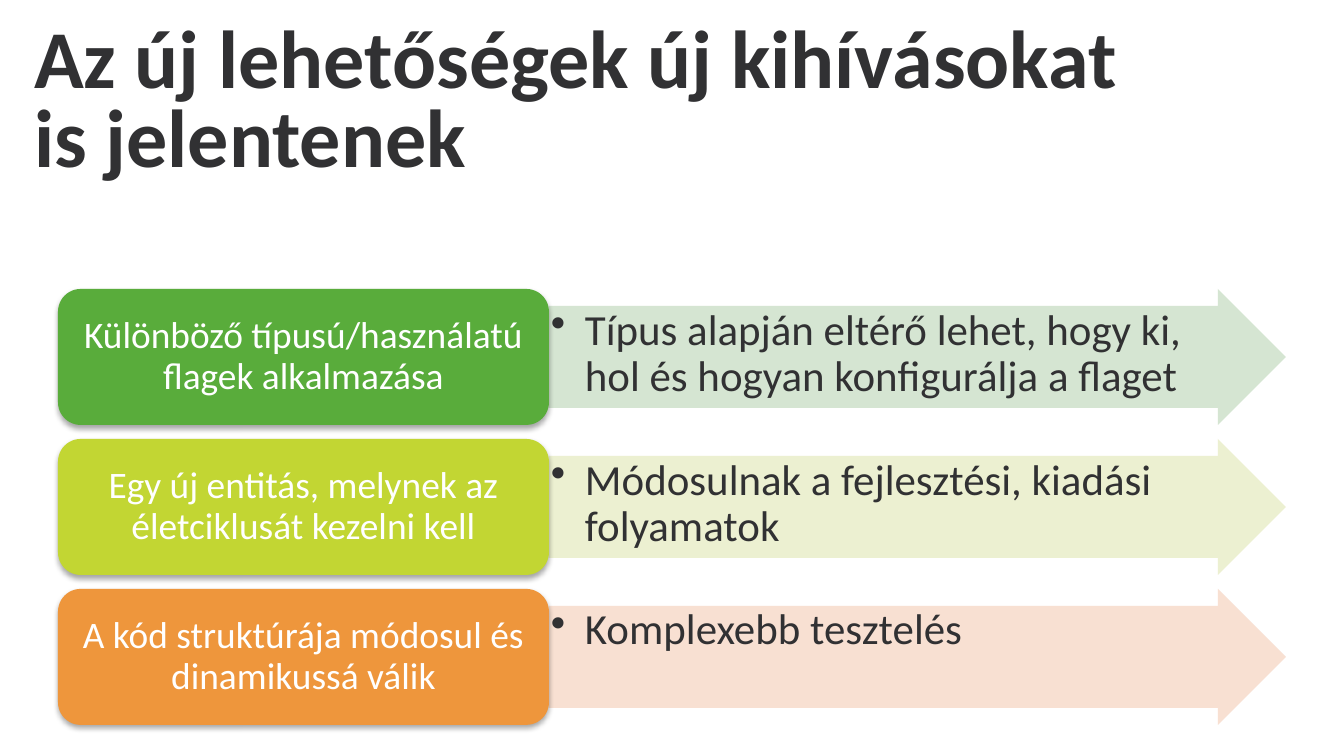
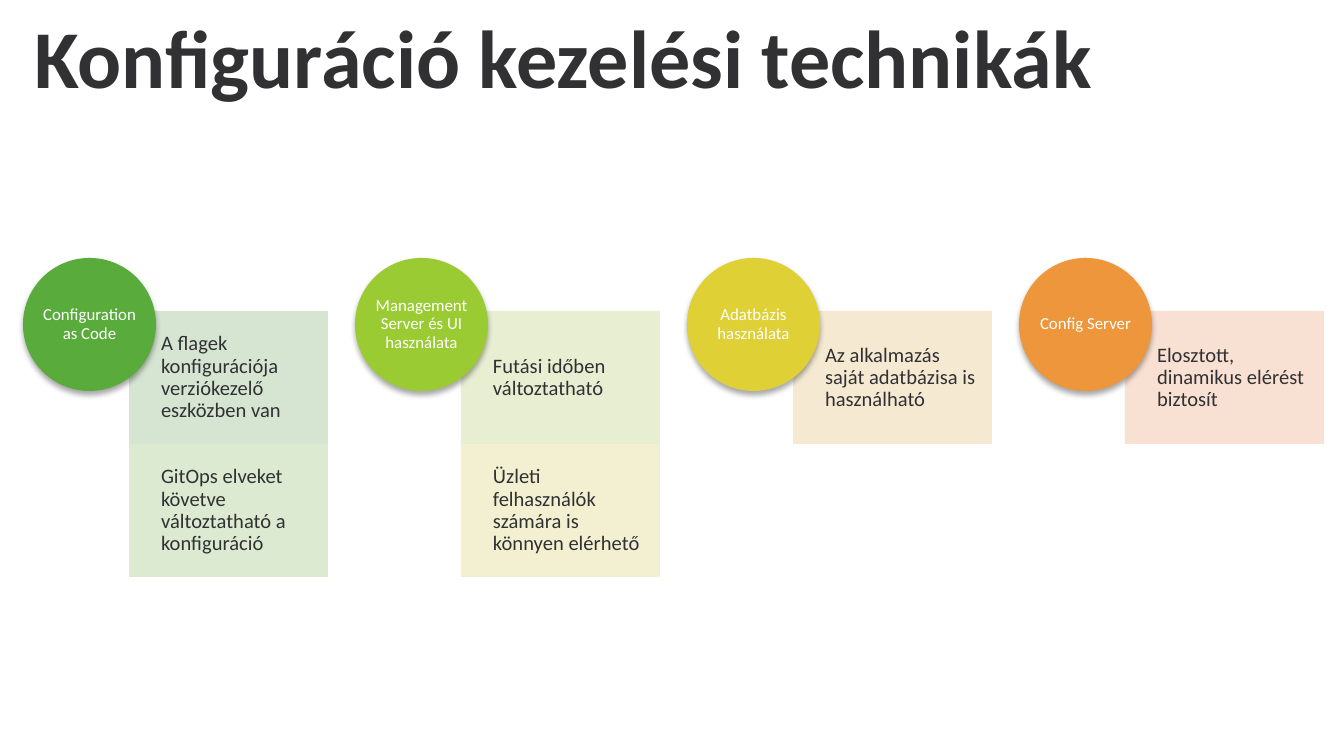
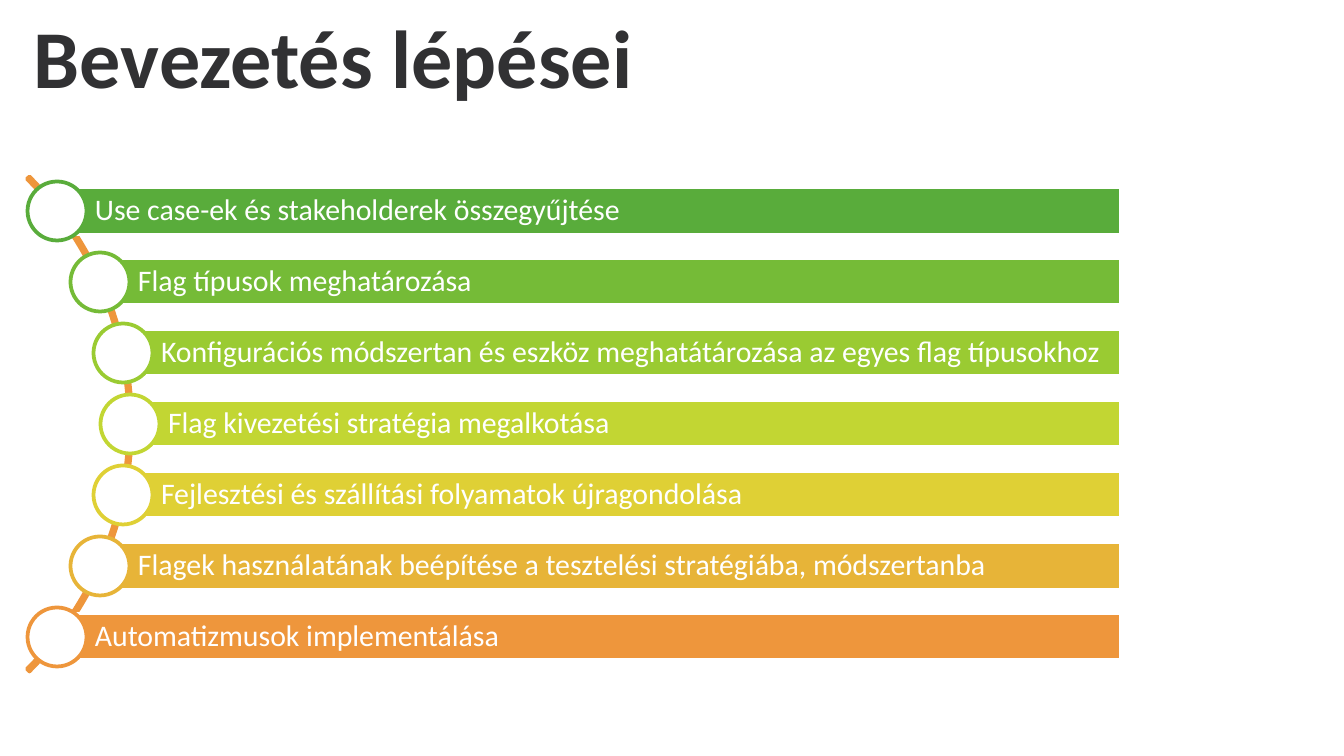
from math import sqrt

from lxml.etree import SubElement
from pptx import Presentation
from pptx.dml.color import RGBColor
from pptx.enum.shapes import MSO_SHAPE as Shape
from pptx.enum.text import MSO_ANCHOR as Anchor, MSO_AUTO_SIZE as AutoSize, PP_ALIGN as Align
from pptx.oxml.ns import qn
from pptx.util import Pt

INK = RGBColor(0x31, 0x31, 0x33)
WHITE = RGBColor(0xFF, 0xFF, 0xFF)
GREEN = RGBColor(0x59, 0xAC, 0x3B)
LEAF = RGBColor(0x75, 0xBB, 0x37)
LIME = RGBColor(0x9A, 0xCB, 0x32)
CITRUS = RGBColor(0xC2, 0xD6, 0x33)
YELLOW = RGBColor(0xDF, 0xD0, 0x35)
AMBER = RGBColor(0xE7, 0xB4, 0x38)
ORANGE = RGBColor(0xEE, 0x96, 0x3C)
PALE_GREEN = RGBColor(0xD1, 0xE3, 0xCE)
PALE_LEAF = RGBColor(0xD9, 0xE8, 0xCD)
PALE_LIME = RGBColor(0xE5, 0xED, 0xCD)
PALE_CITRUS = RGBColor(0xEB, 0xEF, 0xCD)
PALE_YELLOW = RGBColor(0xF1, 0xEF, 0xCD)
PALE_AMBER = RGBColor(0xF5, 0xE7, 0xCD)
PALE_ORANGE = RGBColor(0xF8, 0xDD, 0xCE)

CHALLENGES_TITLE = ("Az új lehetőségek új kihívásokat is jelentenek", 1120)
CHALLENGES = [
    ("Különböző típusú/használatú flagek alkalmazása", GREEN,
     "Típus alapján eltérő lehet, hogy ki, hol és hogyan konfigurálja a flaget", PALE_GREEN),
    ("Egy új entitás, melynek az életciklusát kezelni kell", CITRUS,
     "Módosulnak a fejlesztési, kiadási folyamatok", PALE_CITRUS),
    ("A kód struktúrája módosul és dinamikussá válik", ORANGE,
     "Komplexebb tesztelés", PALE_ORANGE),
]

TECHNIQUES_TITLE = ("Konfiguráció kezelési technikák", 1105)
TECHNIQUES = [
    ("Configuration as Code", GREEN, [
        ("A flagek konfigurációja verziókezelő eszközben van", PALE_GREEN),
        ("GitOps elveket követve változtatható a konfiguráció", PALE_LEAF)]),
    ("Management Server és UI használata", LIME, [
        ("Futási időben változtatható", PALE_LIME),
        ("Üzleti felhasználók számára is könnyen elérhető", PALE_YELLOW)]),
    ("Adatbázis használata", YELLOW, [
        ("Az alkalmazás saját adatbázisa is használható", PALE_AMBER)]),
    ("Config Server", ORANGE, [
        ("Elosztott, dinamikus elérést biztosít", PALE_ORANGE)]),
]

STEPS_TITLE = ("Bevezetés lépései", 1282)
STEPS = [
    ("Use case-ek és stakeholderek összegyűjtése", GREEN),
    ("Flag típusok meghatározása", LEAF),
    ("Konfigurációs módszertan és eszköz meghatátározása az egyes flag típusokhoz", LIME),
    ("Flag kivezetési stratégia megalkotása", CITRUS),
    ("Fejlesztési és szállítási folyamatok újragondolása", YELLOW),
    ("Flagek használatának beépítése a tesztelési stratégiába, módszertanba", AMBER),
    ("Automatizmusok implementálása", ORANGE),
]


def px(length):
    return round(length * 914400 / 134.4)


def font(size, color, bold=False):
    return {"name": "Calibri", "size": Pt(size), "bold": bold, "color": color}


TITLE_FONT = font(44, INK, True)
CHALLENGE_FONT, EFFECT_FONT = font(20, WHITE), font(23, INK)
TECHNIQUE_FONT, CARD_FONT = font(9, WHITE), font(11, INK)
STEP_FONT = font(16, WHITE)


def write(shape, text, text_font, insets=(0, 0, 0, 0), anchor=Anchor.MIDDLE,
          align=Align.LEFT, spacing=0.9, bullet_indent=None):
    frame = shape.text_frame
    sides = ("margin_left", "margin_top", "margin_right", "margin_bottom")
    frame_format = dict(zip(sides, map(px, insets)), word_wrap=True, vertical_anchor=anchor)
    for name, value in frame_format.items():
        setattr(frame, name, value)
    paragraph = frame.paragraphs[0]
    paragraph.text = text
    paragraph.alignment = align
    paragraph.line_spacing = spacing
    if bullet_indent:
        properties = paragraph._p.get_or_add_pPr()
        properties.set("marL", str(px(bullet_indent)))
        properties.set("indent", str(-px(bullet_indent)))
        SubElement(properties, qn("a:buChar"), char="•")
    run_font = paragraph.runs[0].font
    for name, value in text_font.items():
        if name == "color":
            run_font.color.rgb = value
        else:
            setattr(run_font, name, value)


def draw(slide, kind, box, fill=None, line=None, alpha=None, raised=False):
    shape = slide.shapes.add_shape(kind, *map(px, box))
    shape.shadow.inherit = False
    if fill is None:
        shape.fill.background()
    else:
        shape.fill.solid()
        shape.fill.fore_color.rgb = fill
    if line is None:
        shape.line.fill.background()
    else:
        shape.line.color.rgb = line
        shape.line.width = Pt(2)
    properties = shape._element.spPr
    if alpha:
        color = properties.find(qn("a:solidFill"))[0]
        SubElement(color, qn("a:alpha"), val=str(alpha * 1000))
    if raised:
        shadow = SubElement(properties.find(qn("a:effectLst")), qn("a:outerShdw"),
                            blurRad=str(Pt(3.1)), dist=str(Pt(1.8)),
                            dir="5400000", rotWithShape="0")
        color = SubElement(shadow, qn("a:srgbClr"), val="000000")
        SubElement(color, qn("a:alpha"), val="35000")
    return shape


def add_slide(presentation, title, width):
    slide = presentation.slides.add_slide(presentation.slide_layouts[6])
    box = slide.shapes.add_textbox(*map(px, (34, 26, width, 82)))
    write(box, title, TITLE_FONT, anchor=Anchor.TOP, spacing=0.8)
    box.text_frame.auto_size = AutoSize.SHAPE_TO_FIT_TEXT
    return slide


def build_challenges(presentation):
    slide = add_slide(presentation, *CHALLENGES_TITLE)
    left, top, label_width, arrow_width, height, step = 58, 289, 491, 737, 136, 150
    for index, (challenge, color, effect, tint) in enumerate(CHALLENGES):
        row_top = top + index * step
        arrow = draw(slide, Shape.RIGHT_ARROW,
                     (left + label_width, row_top, arrow_width, height), tint, alpha=90)
        arrow.adjustments[0] = 0.75
        write(arrow, effect, EFFECT_FONT, (2, 2, 36, 2), Anchor.TOP, bullet_indent=34)
        label = draw(slide, Shape.ROUNDED_RECTANGLE,
                     (left, row_top, label_width, height), color, raised=True)
        write(label, challenge, CHALLENGE_FONT, (11, 5, 11, 5), align=Align.CENTER)


def build_techniques(presentation):
    slide = add_slide(presentation, *TECHNIQUES_TITLE)
    left, top, size, step = 23, 258, 133, 332
    card_offset, card_top, card_width = 106, 311, 199
    for column, (technique, color, cards) in enumerate(TECHNIQUES):
        column_left = left + column * step
        for row, (text, tint) in enumerate(cards):
            card = draw(slide, Shape.RECTANGLE,
                        (column_left + card_offset, card_top + row * size, card_width, size),
                        tint, alpha=90)
            write(card, text, CARD_FONT, (32, 12, 12, 12))
        circle = draw(slide, Shape.OVAL, (column_left, top, size, size), color, raised=True)
        write(circle, technique, TECHNIQUE_FONT, align=Align.CENTER)


def build_steps(presentation):
    slide = add_slide(presentation, *STEPS_TITLE)
    center_x, center_y, arc_radius, path_radius = -218, 424, 350, 348
    right, height, step, dot = 1121, 47, 71, 59
    arc = draw(slide, Shape.BLOCK_ARC,
               (center_x - arc_radius, center_y - arc_radius, 2 * arc_radius, 2 * arc_radius),
               line=ORANGE)
    for index, value in enumerate((189, 27, 0.005)):
        arc.adjustments[index] = value
    for index, (text, color) in enumerate(STEPS):
        offset = (index - len(STEPS) // 2) * step
        x = center_x + round(sqrt(path_radius ** 2 - offset ** 2))
        y = center_y + offset
        bar = draw(slide, Shape.RECTANGLE, (x, y - height / 2, right - x, height), color, WHITE)
        write(bar, text, STEP_FONT, (38, 5, 5, 5))
        draw(slide, Shape.OVAL, (x - dot / 2, y - dot / 2, dot, dot), WHITE, color)


def main():
    presentation = Presentation()
    presentation.slide_width = px(1344)
    presentation.slide_height = px(756)
    build_challenges(presentation)
    build_techniques(presentation)
    build_steps(presentation)
    presentation.save("out.pptx")


if __name__ == "__main__":
    main()
